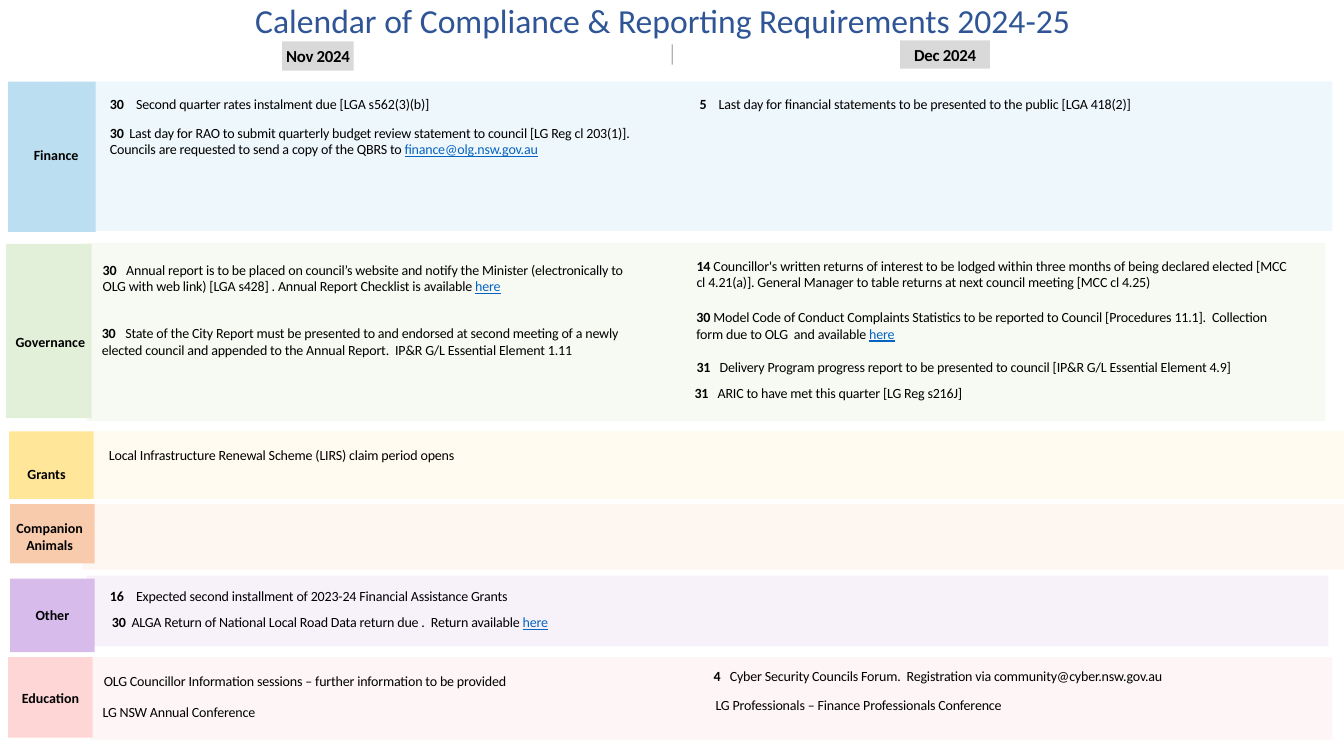
from collections import namedtuple
from dataclasses import dataclass

from lxml.etree import SubElement
from pptx import Presentation
from pptx.dml.color import RGBColor
from pptx.enum.shapes import MSO_CONNECTOR as CONN, MSO_SHAPE as SHAPE
from pptx.enum.text import MSO_ANCHOR as ANCHOR, PP_ALIGN as ALIGN
from pptx.oxml.ns import qn
from pptx.util import Pt


@dataclass(frozen=True)
class Theme:
    """Colours, font and type sizes of the calendar."""
    font: str = "Calibri"
    title_size: float = 24
    month_size: float = 12
    body_size: float = 10
    line_height: float = 12.2
    ink: str = "000000"
    title: str = "2F5597"
    link: str = "0563C1"
    month: str = "D9D9D9"
    finance: tuple = ("BBDEF0", "ADD8ED")
    governance: tuple = ("E2F0D9", "D3E8C6")
    grants: tuple = ("FFE699", "FFECB7")
    animals: tuple = ("F8CBAD", "F9D5BD")
    other: tuple = ("D6BBEB", "D7BCEA")
    education: tuple = ("FED6D6", "FED6D6")


T = Theme()
Entry = namedtuple("Entry", "x y w lines day gap text link", defaults=("",))
Band = namedtuple("Band", "name colors box label shift entries")

BANDS = [
    Band("Finance", T.finance, (44.6, 58.3, 907.2, 106.6), (5.8, 58.3, 62.6, 107.3), (3, -1), [
        Entry(33.9, 10.1, 264, 1, "30", 18.7, "Second quarter rates instalment due [LGA s562(3)(b)]"),
        Entry(33.9, 30.3, 380, 2, "30", 14, "Last day for RAO to submit quarterly budget review statement to "
              "council [LG Reg cl 203(1)].  Councils are requested to send a copy of the QBRS to ",
              "finance@olg.nsw.gov.au"),
        Entry(455.1, 10.1, 387, 1, "5", 13.7, "Last day for financial statements to be presented to the public "
              "[LGA 418(2)]"),
    ]),
    Band("Governance", T.governance, (61.9, 173.5, 884.9, 127.4), (4.3, 174.2, 61.2, 124.6), (1, 7.5), [
        Entry(11.5, 13, 385, 2, "30", 16.8, "Annual report is to be placed on council’s website and notify the "
              "Minister (electronically to OLG with web link) [LGA s428] . Annual Report Checklist is available ",
              "here"),
        Entry(10.8, 58.3, 385, 2, "30", 16.8, "State of the City Report must be presented to and endorsed at "
              "second meeting of a newly elected council and appended to the Annual Report.  "
              "IP&R G/L Essential Element 1.11"),
        Entry(435.6, 10.1, 422, 2, "14", 0, "Councillor's written returns of interest to be lodged within three "
              "months of being declared elected [MCC cl 4.21(a)]. General Manager to table returns at next "
              "council meeting [MCC cl 4.25)"),
        Entry(435.6, 46.8, 426, 2, "30", 0, "Model Code of Conduct Complaints Statistics to be reported to "
              "Council [Procedures 11.1].  Collection form due to OLG  and available ", "here"),
        Entry(435.6, 82.8, 422, 1, "31", 16.5, "Delivery Program progress report to be presented to council "
              "[IP&R G/L Essential Element 4.9]"),
        Entry(434.2, 101.5, 422, 1, "31", 16.5, "ARIC to have met this quarter [LG Reg s216J]"),
    ]),
    Band("Grants", T.grants, (56.2, 308.2, 903.8, 48.2), (6.5, 308.2, 60.5, 48.2), (-3.5, 6), [
        Entry(21.6, 10.8, 333, 1, "", 0, "Local Infrastructure Renewal Scheme (LIRS) claim period opens"),
    ]),
    Band("Companion Animals", T.animals, (59, 360, 901, 46.8), (7.2, 360, 60.5, 42.5), (-2, 2), []),
    Band("Other", T.other, (61.9, 411.1, 887, 50.4), (7.2, 413.3, 60.5, 52.6), (0, 0), [
        Entry(16.6, 8.7, 361, 1, "16", 18.7, "Expected second installment of 2023-24 Financial Assistance Grants"),
        Entry(18.1, 27.4, 380, 1, "30", 14, "ALGA Return of National Local Road Data return due .  "
              "Return available ", "here"),
    ]),
    Band("Education", T.education, (64.8, 469.4, 887, 59), (5.8, 469.4, 60.5, 57.6), (0, 0), [
        Entry(9.4, 10.8, 350, 1, "", 0, "OLG Councillor Information sessions – further information to be provided"),
        Entry(8.6, 32.8, 235, 1, "", 0, "LG NSW Annual Conference"),
        Entry(445, 7.6, 360, 1, "4", 11.5, "Cyber Security Councils Forum.  Registration via "
              "community@cyber.nsw.gov.au"),
        Entry(446.4, 27.8, 235, 1, "", 0, "LG Professionals – Finance Professionals Conference"),
    ]),
]


def points(box):
    """Turn numbers into point lengths."""
    return [Pt(v) for v in box]


def set_alpha(clr, percent):
    """Set the opacity of a solid colour element."""
    SubElement(clr, qn("a:alpha")).set("val", str(percent * 1000))


def add_run(p, text, size=T.body_size, color=T.ink, bold=False, underline=False, spacing=0):
    """Append a formatted run to a paragraph."""
    r = p.add_run()
    r.text = text
    f = r.font
    f.name, f.size, f.bold, f.underline = T.font, Pt(size), bold, underline
    f.color.rgb = RGBColor.from_string(color)
    if spacing:
        r._r.get_or_add_rPr().set("spc", str(spacing))


def frame(sp, align=ALIGN.LEFT, anchor=ANCHOR.TOP, wrap=True):
    """Prepare a text frame without insets and return its paragraph."""
    tf = sp.text_frame
    tf.word_wrap, tf.vertical_anchor = wrap, anchor
    tf.margin_left = tf.margin_right = tf.margin_top = tf.margin_bottom = 0
    p = tf.paragraphs[0]
    p.alignment = align
    return p


def add_panel(s, box, color, opacity=100):
    """Draw a plain rectangle."""
    sp = s.shapes.add_shape(SHAPE.RECTANGLE, *points(box))
    sp.shadow.inherit = False
    sp.line.fill.background()
    sp.fill.solid()
    sp.fill.fore_color.rgb = RGBColor.from_string(color)
    if opacity < 100:
        set_alpha(sp._element.spPr.find(".//" + qn("a:srgbClr")), opacity)
    return sp


def add_entry(s, x, y, e):
    """Write one dated entry relative to its band's corner."""
    box = (x + e.x, y + e.y, e.w, e.lines * T.line_height)
    p = frame(s.shapes.add_textbox(*points(box)))
    if e.gap:
        tabs = SubElement(p._p.get_or_add_pPr(), qn("a:tabLst"))
        tab = SubElement(tabs, qn("a:tab"))
        tab.set("pos", str(Pt(e.gap)))
        tab.set("algn", "l")
    if e.day:
        add_run(p, e.day + ("\t" if e.gap else " "), bold=True, spacing=-10)
    add_run(p, e.text, spacing=-10)
    if e.link:
        add_run(p, e.link, color=T.link, underline=True, spacing=-10)


def add_band(s, band):
    """Draw a category row with its label and entries."""
    solid, tint = band.colors
    add_panel(s, band.box, tint, 20)
    sp = add_panel(s, band.label, solid)
    p = frame(sp, ALIGN.CENTER, ANCHOR.MIDDLE)
    dx, dy = band.shift
    tf = sp.text_frame
    tf.margin_left, tf.margin_right = Pt(max(0, 2 * dx)), Pt(max(0, -2 * dx))
    tf.margin_top, tf.margin_bottom = Pt(max(0, 2 * dy)), Pt(max(0, -2 * dy))
    add_run(p, band.name, bold=True)
    for e in band.entries:
        add_entry(s, *band.box[:2], e)


def add_header(s, x, y, w, h):
    """Draw the title, the month tags and the divider."""
    p = frame(s.shapes.add_textbox(*points((x, y, w, h))), ALIGN.CENTER)
    add_run(p, "Calendar of Compliance & Reporting Requirements 2024-25", size=T.title_size, color=T.title)
    for name, dx, dy, width, height in (("Nov 2024", 36.7, 29.5, 51.1, 20.9), ("Dec 2024", 478.1, 28.8, 64.1, 20.2)):
        sp = add_panel(s, (x + dx, y + dy, width, height), T.month)
        p = frame(sp, ALIGN.CENTER, ANCHOR.MIDDLE, wrap=False)
        add_run(p, name, size=T.month_size, bold=True, spacing=-20)
    mid = x + 315.3
    cn = s.shapes.add_connector(CONN.STRAIGHT, *points((mid, y + 31.7, mid, y + 46.1)))
    cn.line.width = Pt(0.75)
    cn.line.color.rgb = RGBColor.from_string(T.ink)
    pr = cn._element.spPr
    set_alpha(pr.find(".//" + qn("a:srgbClr")), 30)
    SubElement(pr, qn("a:effectLst"))


def main():
    """Build and save the calendar slide."""
    prs = Presentation()
    prs.slide_width, prs.slide_height = Pt(960), Pt(540)
    s = prs.slides.add_slide(prs.slide_layouts[6])
    add_header(s, 164.9, 0, 617, 29)
    for band in BANDS:
        add_band(s, band)
    prs.save("out.pptx")


if __name__ == "__main__":
    main()
